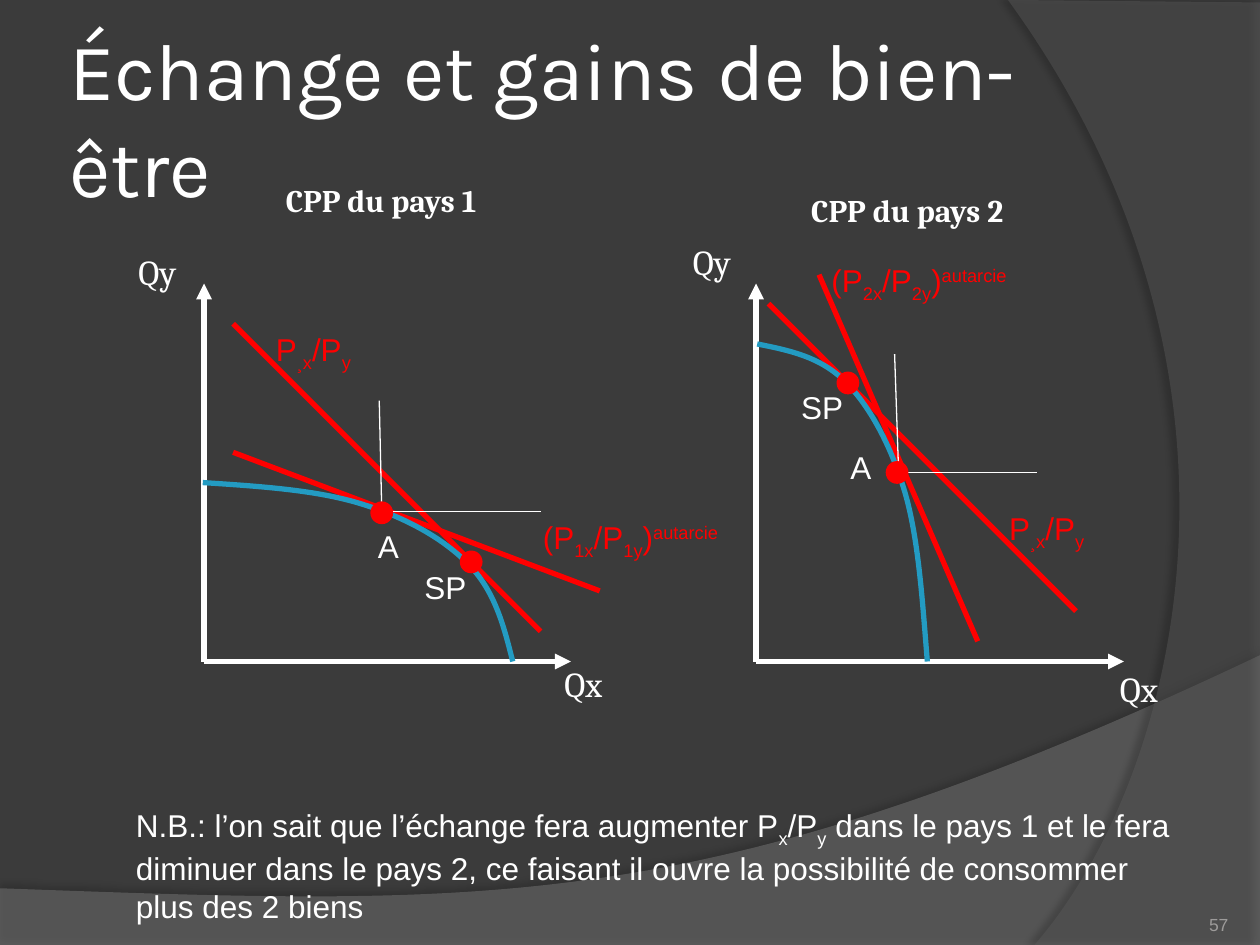
"""Build the slide on exchange and welfare gains, with one diagram per country."""
from lxml import etree
from pptx import Presentation
from pptx.dml.color import RGBColor
from pptx.enum.shapes import MSO_CONNECTOR, MSO_SHAPE
from pptx.enum.text import MSO_ANCHOR, MSO_AUTO_SIZE, PP_ALIGN
from pptx.oxml.ns import qn
from pptx.util import Inches, Pt

STRAIGHT = MSO_CONNECTOR.STRAIGHT
OVAL = MSO_SHAPE.OVAL
TOP, MIDDLE, BOTTOM = MSO_ANCHOR.TOP, MSO_ANCHOR.MIDDLE, MSO_ANCHOR.BOTTOM
GROW, FIXED = MSO_AUTO_SIZE.SHAPE_TO_FIT_TEXT, MSO_AUTO_SIZE.NONE
LEFT, RIGHT = PP_ALIGN.LEFT, PP_ALIGN.RIGHT
WHITE, RED, BLUE, GREY = "FFFFFF", "FF0000", "239BC2", "9D9B9A"
SUB, SUP = -25000, 30000
color = RGBColor.from_string

deck = Presentation()
deck.slide_width, deck.slide_height = Inches(10), Inches(7.5)
slide = deck.slides.add_slide(deck.slide_layouts[6])
slide.background.fill.solid()
slide.background.fill.fore_color.rgb = color("3B3B3B")
shapes = slide.shapes


def trace(start, parts, close=False):
    """Draw a path of line ends (x, y) and cubic parts (x1, y1, x2, y2, x, y)."""
    pen = shapes.build_freeform(*map(Inches, start))
    pen.add_line_segments([tuple(map(Inches, part[-2:])) for part in parts], close=close)
    shape = pen.convert_to_shape()
    shape.shadow.inherit = False
    for node, part in zip(list(shape._element.iter(qn("a:lnTo"))), parts):
        if len(part) == 6:
            node.tag = qn("a:cubicBezTo")
            for spot in (0, 1):
                x, y = map(Inches, part[2 * spot:2 * spot + 2])
                node.insert(spot, etree.Element(
                    qn("a:pt"), x=str(x - shape.left), y=str(y - shape.top)))
    return shape


def write(area, runs, size=18, font="Arial", tint=WHITE, wrap=False, bold=False,
          anchor=TOP, align=LEFT, inset=(0.1, 0.05), fit=GROW):
    """Add a text box; a run is a (text, baseline) pair."""
    frame = shapes.add_textbox(*map(Inches, area)).text_frame
    frame.word_wrap = wrap
    frame.auto_size = fit
    frame.vertical_anchor = anchor
    frame.margin_left = frame.margin_right = Inches(inset[0])
    frame.margin_top = frame.margin_bottom = Inches(inset[1])
    line = frame.paragraphs[0]
    line.alignment = align
    for text, base in runs:
        run = line.add_run()
        run.text = text
        run.font.size, run.font.name, run.font.bold = Pt(size), font, bold
        run.font.color.rgb = color(tint)
        if base:
            run.font._element.set("baseline", str(base))


bands = [
    ((0, 7.05), [(0, 7.51), (10, 7.51), (10, 5.2), (5.59, 7.29, 3.91, 7.19, 0, 7.05)],
     "7F7F7F", 45, 35, 3.5, 270),
    ((10, 0.02), [(10, 7.5), (8.21, 7.5), (9.35, 6.19, 10.18, 3, 8, 0)],
     "5E5E5E", 40, 45, 4, 180),
]
for start, parts, tint, alpha, dark, gap, angle in bands:
    band = trace(start, parts, close=True)
    band.fill.solid()
    band.fill.fore_color.rgb = color(tint)
    band.line.fill.background()
    props = band._element.spPr
    fill = props.find(qn("a:solidFill"))[0]
    etree.SubElement(fill, qn("a:alpha"), val=str(alpha * 1000))
    shade = etree.SubElement(props.find(qn("a:effectLst")), qn("a:outerShdw"),
                             blurRad=str(Pt(4)), dist=str(Pt(gap)),
                             dir=str(angle * 60000), algn="ctr", rotWithShape="0")
    black = etree.SubElement(shade, qn("a:srgbClr"), val="000000")
    etree.SubElement(black, qn("a:alpha"), val=str(dark * 1000))

write((0.5, 0.3, 8.17, 1.25), [("Échange et gains de bien-être", 0)], 46, "Karla",
      wrap=True, anchor=MIDDLE, inset=(0.05, 0.05), fit=FIXED)
write((0.98, 6.35, 8.58, 1.01), [
    ("N.B.: l’on sait que l’échange fera augmenter P", 0), ("x", SUB), ("/P", 0), ("y", SUB),
    (" dans le pays 1 et le fera diminuer dans le pays 2, ce faisant il ouvre "
     "la possibilité de consommer plus des 2 biens", 0)], wrap=True)

for x, y, text in [(2.17, 1.39, "CPP du pays 1"), (6.34, 1.47, "CPP du pays 2")]:
    write((x, y, 1.77, 0.4), [(text, 0)], font="Cambria", bold=True)
for x, y, text in [(4.38, 5.21, "Qx"), (1, 1.94, "Qy"), (8.79, 5.25, "Qx"), (5.4, 1.86, "Qy")]:
    write((x, y, 0.55, 0.44), [(text, 0)], 20, "Cambria")
for x, y in [(7.91, 3.99), (2.09, 2.57)]:
    write((x, y, 1.18, 0.4), [("P", 0), ("¸x", SUB), ("/P", 0), ("y", SUB)], tint=RED, wrap=True)
for x, y, wide, text in [(2.9, 4.13, 0.37, "A"), (3.27, 4.46, 0.54, "SP"),
                         (6.26, 3.03, 0.54, "SP"), (6.65, 3.51, 0.37, "A")]:
    write((x, y, wide, 0.4), [(text, 0)])
for x, y, land in [(4.21, 4.06, "1"), (6.5, 2.02, "2")]:
    write((x, y, 2.05, 0.4), [("(P", 0), (land + "x", SUB), ("/P", 0), (land + "y", SUB),
                              (")", 0), ("autarcie", SUP)], tint=RED, wrap=True)

axes = [(1.62, 5.25, 4.53, 5.25), (1.62, 5.25, 1.62, 2.25),
        (6, 5.25, 8.92, 5.25), (6, 5.25, 6, 2.25)]
prices = [(1.85, 2.57, 4.29, 5.01), (6.1, 2.41, 8.54, 4.85),
          (1.85, 3.59, 4.76, 4.69), (6.5, 2.18, 7.76, 5.09)]
guides = [(7.1, 2.81, 7.13, 3.69), (7.13, 3.75, 8.23, 3.75),
          (3.01, 3.18, 3.03, 4.06), (3.11, 4.06, 4.29, 4.06)]
for group, tint, width in [(axes, WHITE, 3), (prices, RED, 3), (guides, WHITE, 0.75)]:
    for ends in group:
        link = shapes.add_connector(STRAIGHT, *map(Inches, ends))
        link.line.color.rgb = color(tint)
        link.line.width = Pt(width)
        props = link._element.spPr
        if group is axes:
            etree.SubElement(props.find(qn("a:ln")), qn("a:tailEnd"), type="triangle")
        etree.SubElement(props, qn("a:effectLst"))

curves = [
    ((6.01, 2.73), [(6.26, 2.78, 6.51, 2.83, 6.71, 3.03), (6.9, 3.22, 7.07, 3.53, 7.18, 3.9),
                    (7.29, 4.27, 7.32, 4.76, 7.36, 5.25)]),
    ((1.61, 3.83), [(2.07, 3.86, 2.52, 3.89, 2.87, 4), (3.23, 4.11, 3.53, 4.28, 3.73, 4.49),
                    (3.93, 4.7, 4, 4.97, 4.07, 5.25)]),
]
for start, parts in curves:
    curve = trace(start, parts)
    curve.fill.background()
    curve.line.color.rgb = color(BLUE)
    curve.line.width = Pt(3)

for x, y in [(7.04, 3.67), (6.65, 2.96), (3.66, 4.38), (2.95, 3.99)]:
    dot = shapes.add_shape(OVAL, Inches(x), Inches(y), Inches(0.16), Inches(0.16))
    dot.shadow.inherit = False
    dot.fill.solid()
    dot.fill.fore_color.rgb = dot.line.color.rgb = color(RED)
    dot.line.width = Pt(1.5)

write((8.92, 7.02, 0.83, 0.4), [("57", 0)], 10, tint=GREY, wrap=True,
      anchor=BOTTOM, align=RIGHT, inset=(0, 0), fit=FIXED)

deck.save("out.pptx")
